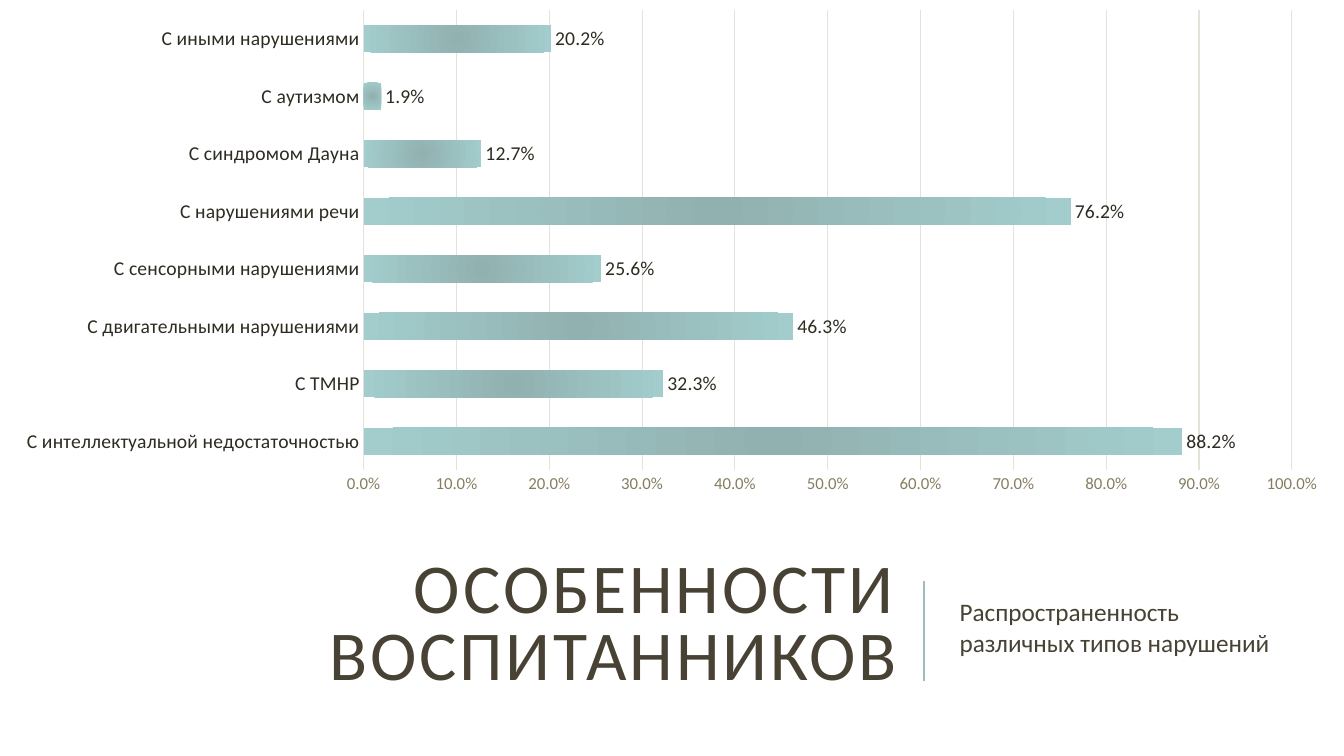
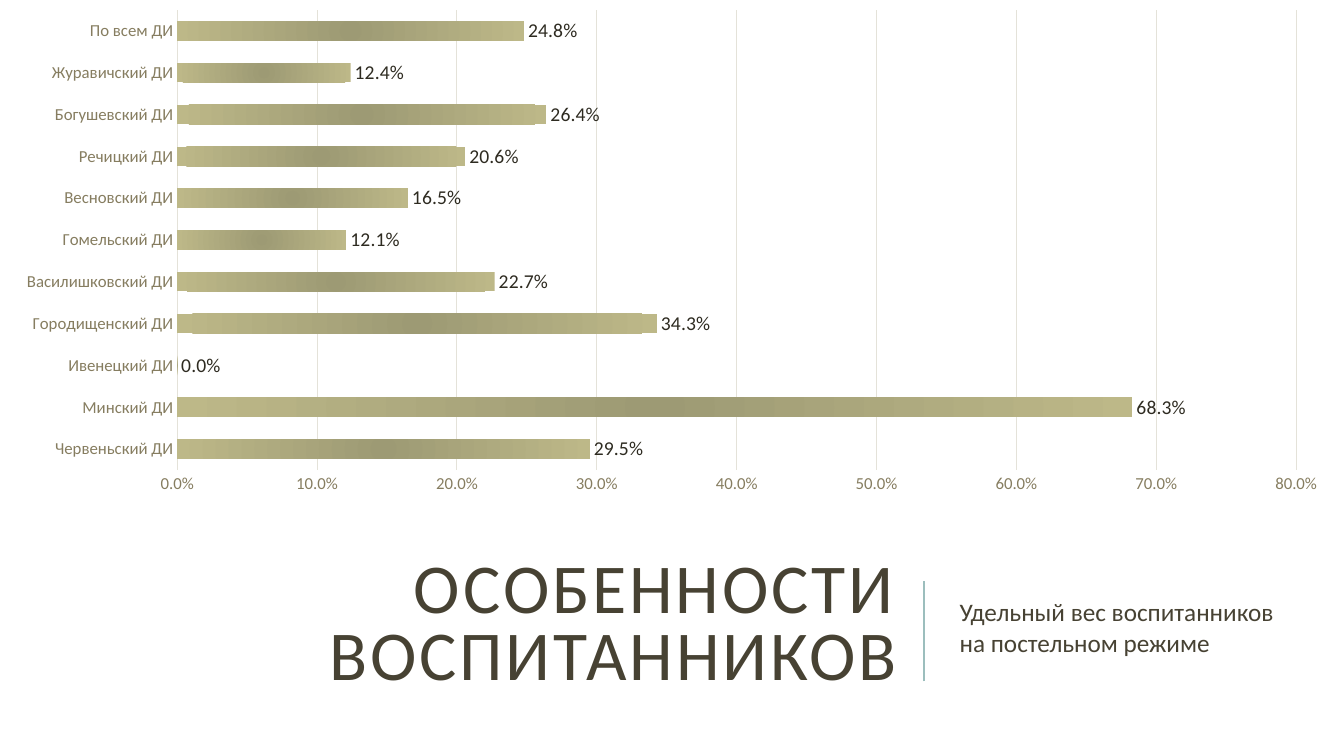
from collections import namedtuple

from pptx import Presentation
from pptx.chart.data import CategoryChartData
from pptx.dml.color import RGBColor
from pptx.enum.chart import XL_CHART_TYPE, XL_LABEL_POSITION, XL_TICK_MARK
from pptx.enum.shapes import MSO_CONNECTOR
from pptx.enum.text import MSO_ANCHOR, MSO_AUTO_SIZE, PP_ALIGN
from pptx.oxml import parse_xml
from pptx.oxml.ns import nsdecls
from pptx.util import Cm, Pt

Box = namedtuple("Box", "left top width height")

FONT = "Calibri"
HEADING, INK, MUTED = "474233", "2E2B21", "867D60"
RULE, GRID = "9CBEBD", "E4E2D9"
PERCENT = "0.0%"
SLIDE_WIDTH, SLIDE_HEIGHT = 33.87, 19.05
CHART_BOX = Box(0, 0, SLIDE_WIDTH, 12.7)
CAPTION_BOX = Box(1.27, 13.77, 31.55, 4.06)
HEADLINE = "ОСОБЕННОСТИ ВОСПИТАННИКОВ"

DISORDERS = [
    ("С интеллектуальной недостаточностью", 0.882),
    ("С ТМНР", 0.323),
    ("С двигательными нарушениями", 0.463),
    ("С сенсорными нарушениями", 0.256),
    ("С нарушениями речи", 0.762),
    ("С синдромом Дауна", 0.127),
    ("С аутизмом", 0.019),
    ("С иными нарушениями", 0.202),
]
BED_REST = [
    ("Червеньский ДИ", 0.295),
    ("Минский ДИ", 0.683),
    ("Ивенецкий ДИ", 0),
    ("Городищенский ДИ", 0.343),
    ("Василишковский ДИ", 0.227),
    ("Гомельский ДИ", 0.121),
    ("Весновский ДИ", 0.165),
    ("Речицкий ДИ", 0.206),
    ("Богушевский ДИ", 0.264),
    ("Журавичский ДИ", 0.124),
    ("По всем ДИ", 0.248),
]


def color(hex_value):
    return RGBColor.from_string(hex_value)


def set_font(font, size, hex_value):
    font.name = FONT
    font.size = Pt(size)
    font.bold = False
    font.color.rgb = color(hex_value)


def set_line(line, hex_value, width):
    line.color.rgb = color(hex_value)
    line.width = Pt(width)


def fill_radial(series, inner, outer):
    gradient = parse_xml(
        f'<a:gradFill {nsdecls("a")} rotWithShape="1"><a:gsLst>'
        f'<a:gs pos="0"><a:srgbClr val="{inner}"/></a:gs>'
        f'<a:gs pos="100000"><a:srgbClr val="{outer}"/></a:gs></a:gsLst>'
        '<a:path path="circle"><a:fillToRect l="100000" t="100000" '
        'r="100000" b="100000"/></a:path></a:gradFill>'
    )
    series._element.get_or_add_spPr().insert(0, gradient)


def place_text(placeholder, box, text, size):
    placeholder.left, placeholder.top = Cm(box.left), Cm(box.top)
    placeholder.width, placeholder.height = Cm(box.width), Cm(box.height)
    frame = placeholder.text_frame
    frame.text = text
    frame.word_wrap = True
    frame.auto_size = MSO_AUTO_SIZE.NONE
    frame.vertical_anchor = MSO_ANCHOR.MIDDLE
    paragraph = frame.paragraphs[0]
    paragraph.space_before = Pt(0)
    set_font(paragraph.font, size, HEADING)
    return paragraph


def add_caption(slide, box, subtitle):
    headline_box = box._replace(width=21.59)
    subtitle_box = box._replace(left=box.left + box.width - 8.89, width=8.89)

    headline = place_text(slide.shapes.title, headline_box, HEADLINE, 50)
    headline.alignment = PP_ALIGN.RIGHT
    headline.line_spacing = 0.8
    headline.runs[0]._r.get_or_add_rPr().set("spc", "200")

    summary = place_text(slide.placeholders[1], subtitle_box, subtitle, 18)
    summary.space_after = Pt(2)

    divider_x = Cm(subtitle_box.left - 0.64)
    divider = slide.shapes.add_connector(
        MSO_CONNECTOR.STRAIGHT,
        divider_x, Cm(box.top + 3.4), divider_x, Cm(box.top + 0.86),
    )
    set_line(divider.line, RULE, 1.5)
    divider._element.spPr.append(parse_xml(f'<a:effectLst {nsdecls("a")}/>'))


def style_axes(chart, maximum, category_size, category_color):
    categories, shares = chart.category_axis, chart.value_axis
    for axis in (categories, shares):
        axis.major_tick_mark = axis.minor_tick_mark = XL_TICK_MARK.NONE
    set_font(categories.tick_labels.font, category_size, category_color)
    set_line(categories.format.line, GRID, 1)

    set_font(shares.tick_labels.font, 12, MUTED)
    shares.tick_labels.number_format = PERCENT
    shares.tick_labels.number_format_is_linked = False
    shares.minimum_scale, shares.maximum_scale = 0, maximum
    shares.major_unit = 0.1
    shares.format.line.fill.background()
    shares.has_major_gridlines = True
    set_line(shares.major_gridlines.format.line, GRID, 0.75)


def add_share_chart(slide, box, shares, maximum, gradient, category_size, category_color):
    chart_data = CategoryChartData(number_format=PERCENT)
    chart_data.categories = [name for name, _ in shares]
    chart_data.add_series("Series 1", [share for _, share in shares])
    chart = slide.shapes.add_chart(
        XL_CHART_TYPE.BAR_CLUSTERED, *map(Cm, box), chart_data
    ).chart
    chart.has_title = chart.has_legend = False
    set_font(chart.font, 10, INK)
    style_axes(chart, maximum, category_size, category_color)

    plot = chart.plots[0]
    plot.gap_width, plot.overlap = 115, -20
    plot.vary_by_categories = False
    series = plot.series[0]
    series.invert_if_negative = False
    fill_radial(series, *gradient)

    labels = series.data_labels
    labels.show_value = True
    labels.number_format = PERCENT
    labels.number_format_is_linked = False
    labels.position = XL_LABEL_POSITION.OUTSIDE_END
    set_font(labels.font, 14, INK)


def add_share_slide(deck, subtitle, **chart_options):
    slide = deck.slides.add_slide(deck.slide_layouts.get_by_name("Section Header"))
    add_caption(slide, CAPTION_BOX, subtitle)
    add_share_chart(slide, CHART_BOX, **chart_options)


def main():
    deck = Presentation()
    deck.slide_width, deck.slide_height = Cm(SLIDE_WIDTH), Cm(SLIDE_HEIGHT)
    add_share_slide(
        deck, "Распространенность различных типов нарушений",
        shares=DISORDERS, maximum=1, gradient=("91B1B0", "A2CDCC"),
        category_size=14, category_color=INK,
    )
    add_share_slide(
        deck, "Удельный вес воспитанников на постельном режиме",
        shares=BED_REST, maximum=0.8, gradient=("9D9A74", "BDB888"),
        category_size=12, category_color=MUTED,
    )
    deck.save("out.pptx")


if __name__ == "__main__":
    main()
